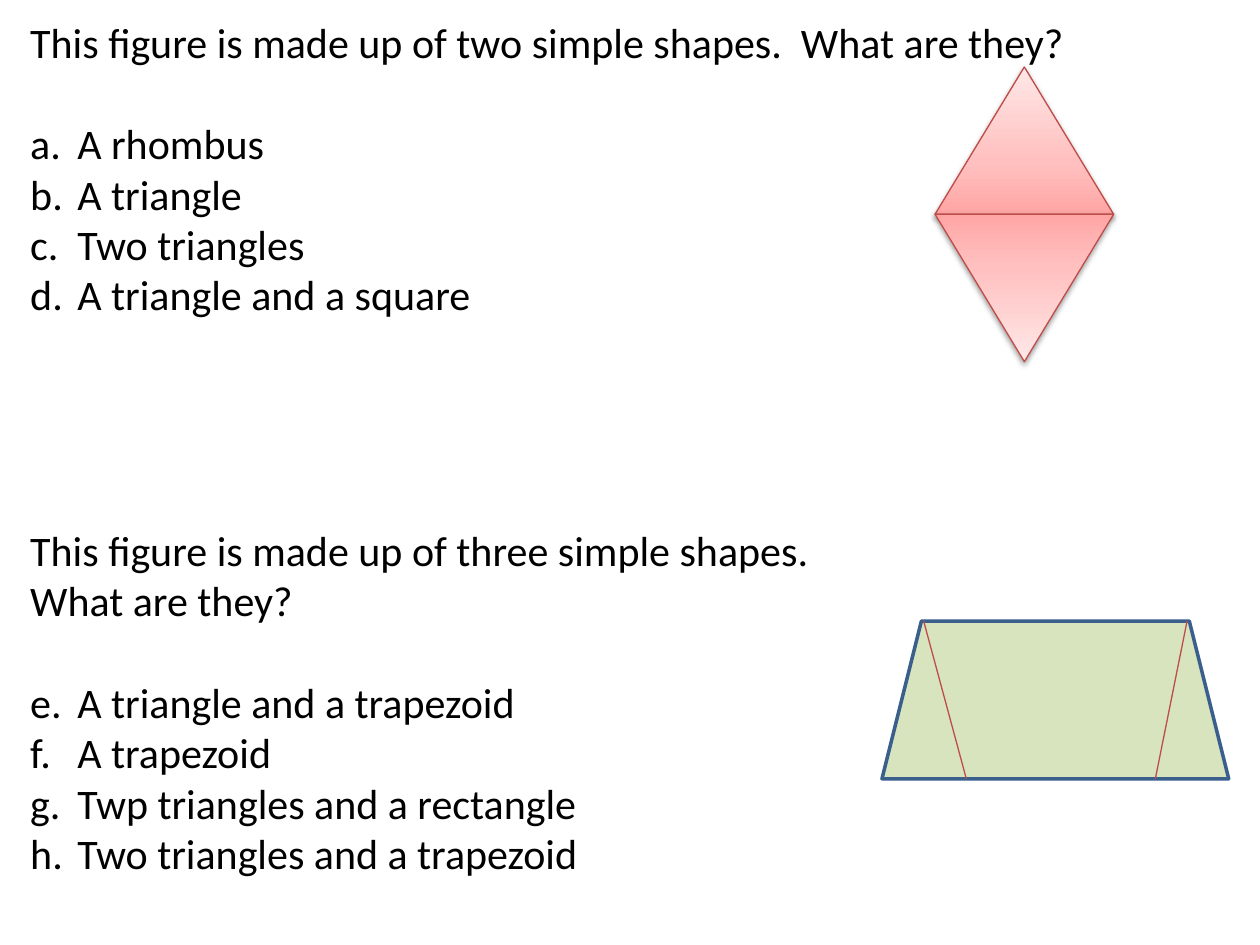
"""Build a slide with two questions about composite figures."""
from copy import deepcopy
from lxml.etree import SubElement as Sub
from pptx import Presentation
from pptx.dml.color import RGBColor as Rgb
from pptx.enum.shapes import MSO_CONNECTOR as Conn, MSO_SHAPE as Kind
from pptx.oxml.ns import qn
from pptx.util import Cm, Pt

INK = {"text": "000000", "red": "BF4C48", "green": "D7E4BD", "blue": "3A5F8C"}
FADE = [(0, "FFA6A5"), (0.35, "FFC0BF"), (1, "FFE7E7")]
ASKS = [
    (1, ["This figure is made up of two simple shapes.  What are they?"],
     ["A rhombus", "A triangle", "Two triangles", "A triangle and a square"]),
    (5, ["This figure is made up of three simple shapes.", "What are they?"],
     ["A triangle and a trapezoid", "A trapezoid",
      "Twp triangles and a rectangle", "Two triangles and a trapezoid"]),
]
ROW = 29.3
TRI = {"left": 18.85, "top": 1.35, "wide": 3.6, "high": 2.97}
TRAP = {"left": 17.78, "top": 12.52, "wide": 6.99, "high": 3.18}
CUTS = [(18.62, 19.48), (23.93, 23.29)]


def edge(line, ink, size):
    line.color.rgb = Rgb.from_string(INK[ink])
    line.width = Pt(size)


def shade(shape):
    fx = Sub(shape._element.spPr, qn("a:effectLst"))
    drop = Sub(fx, qn("a:outerShdw"), blurRad="40000", dist="20000",
               dir="5400000", rotWithShape="0")
    tint = Sub(drop, qn("a:srgbClr"), val="000000")
    Sub(tint, qn("a:alpha"), val="38000")


def blend(shape):
    fill = shape.fill
    fill.gradient()
    fill.gradient_angle = 90
    stops = shape._element.spPr.find(qn("a:gradFill")).find(qn("a:gsLst"))
    stops.append(deepcopy(stops[0]))
    for stop, (pos, ink) in zip(fill.gradient_stops, FADE):
        stop.position = pos
        stop.color.rgb = Rgb.from_string(ink)


def write(frame):
    first = True
    for start, heads, picks in ASKS:
        for i, text in enumerate(heads + picks):
            para = frame.paragraphs[0] if first else frame.add_paragraph()
            para.text = text
            if i == 0 and not first:
                para.space_before = Pt(4 * ROW)
            if i == len(heads):
                para.space_before = Pt(ROW)
            if i >= len(heads):
                prop = para._p.get_or_add_pPr()
                prop.set("marL", str(Cm(0.95)))
                prop.set("indent", str(-Cm(0.95)))
                Sub(prop, qn("a:buFont"), typeface="+mj-lt")
                Sub(prop, qn("a:buAutoNum"), type="alphaLcPeriod",
                    startAt=str(start))
            para.font.name = "Calibri"
            para.font.size = Pt(24)
            para.font.color.rgb = Rgb.from_string(INK["text"])
            first = False


def main():
    deck = Presentation()
    deck.slide_width, deck.slide_height = Cm(25.4), Cm(19.05)
    shapes = deck.slides.add_slide(deck.slide_layouts[6]).shapes

    for i in range(2):
        tri = shapes.add_shape(
            Kind.ISOSCELES_TRIANGLE, Cm(TRI["left"]),
            Cm(TRI["top"] + i * TRI["high"]), Cm(TRI["wide"]), Cm(TRI["high"]))
        tri.rotation = 180 * i
        blend(tri)
        edge(tri.line, "red", 0.75)
        shade(tri)

    box = shapes.add_textbox(Cm(0.36), Cm(0.2), Cm(21.54), Cm(19.23))
    box.text_frame.word_wrap = True
    write(box.text_frame)

    trap = shapes.add_shape(Kind.TRAPEZOID, *(Cm(n) for n in TRAP.values()))
    trap.shadow.inherit = False
    trap.fill.solid()
    trap.fill.fore_color.rgb = Rgb.from_string(INK["green"])
    edge(trap.line, "blue", 2)

    top, base = Cm(TRAP["top"]), Cm(TRAP["top"] + TRAP["high"])
    for head, foot in CUTS:
        cut = shapes.add_connector(Conn.STRAIGHT, Cm(head), top, Cm(foot), base)
        edge(cut.line, "red", 0.75)
        Sub(cut._element.spPr, qn("a:effectLst"))

    deck.save("out.pptx")


if __name__ == "__main__":
    main()
